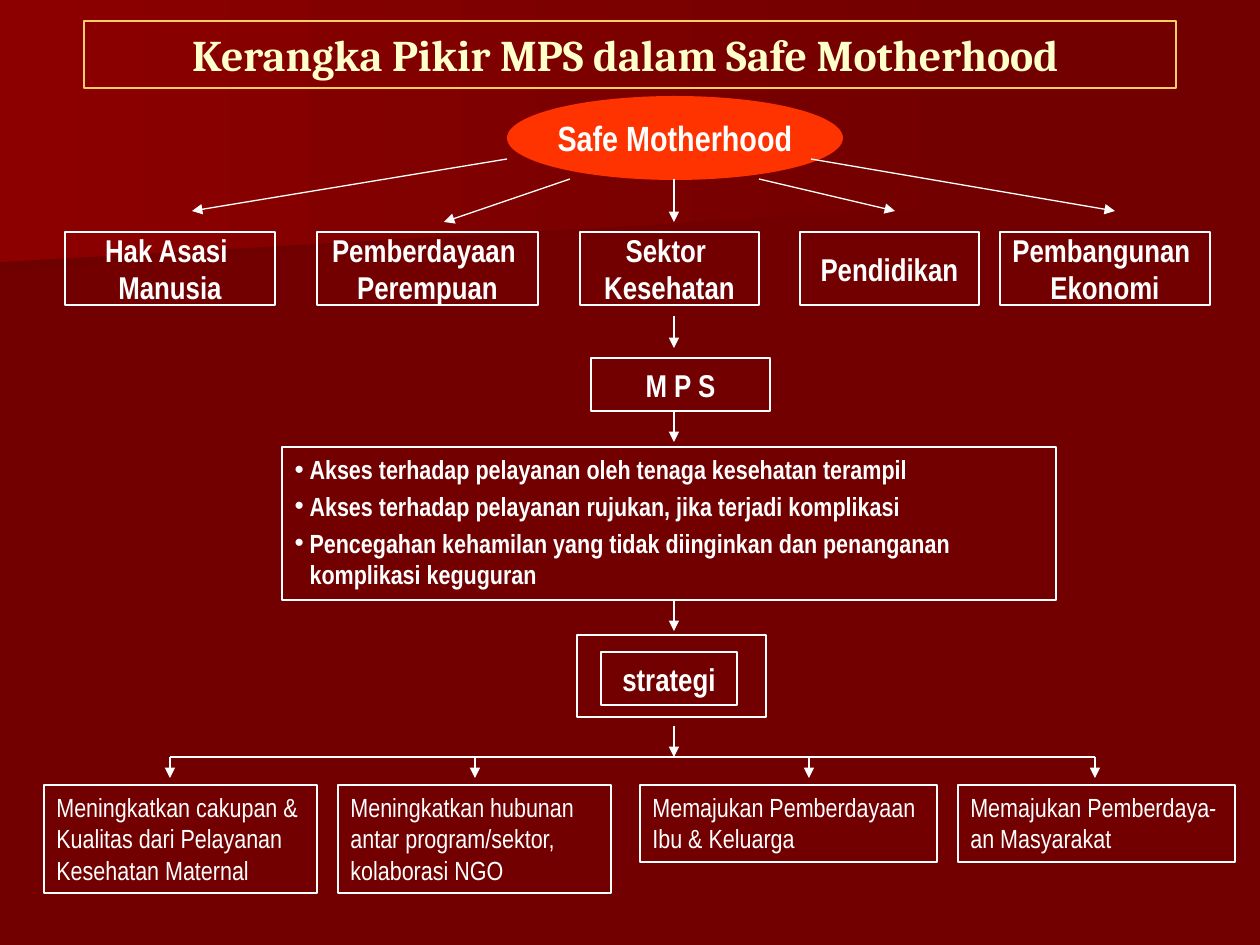
from lxml import etree
from pptx import Presentation
from pptx.dml.color import RGBColor
from pptx.enum.shapes import MSO_CONNECTOR, MSO_SHAPE
from pptx.enum.text import MSO_ANCHOR, MSO_AUTO_SIZE, PP_ALIGN
from pptx.oxml.ns import qn
from pptx.util import Pt

RECT, OVAL = MSO_SHAPE.RECTANGLE, MSO_SHAPE.OVAL
STRAIGHT = MSO_CONNECTOR.STRAIGHT
TOP, MIDDLE = MSO_ANCHOR.TOP, MSO_ANCHOR.MIDDLE
LEFT, CENTER = PP_ALIGN.LEFT, PP_ALIGN.CENTER
NO_FIT = MSO_AUTO_SIZE.NONE

SCALE = 914400 / 126
WHITE = "FFFFFF"
NARROW = "Arial Narrow"
AXIS = 674  # x of the central flow
BAR = 757   # y of the line that branches to the strategies

HEAD = {"name": NARROW, "size": Pt(18), "bold": True}
OVAL_FONT = {**HEAD, "size": Pt(20)}
BODY = {"name": NARROW, "size": Pt(15), "bold": False}
LIST = {**BODY, "bold": True}
TITLE = {"name": "Cambria", "size": Pt(25), "bold": True}

PILLARS = [
    (65, 210, "Hak Asasi \nManusia"),
    (317, 221, "Pemberdayaan \nPerempuan"),
    (580, 179, "Sektor \nKesehatan"),
    (800, 179, "Pendidikan"),
    (1000, 210, "Pembangunan \nEkonomi"),
]
RAYS = [
    (507, 159, 192, 211),
    (570, 179, 444, 222),
    (AXIS, 179, AXIS, 222),
    (759, 179, 895, 211),
    (811, 159, 1115, 211),
]
GOALS = [
    "Akses terhadap pelayanan oleh tenaga kesehatan terampil",
    "Akses terhadap pelayanan rujukan, jika terjadi komplikasi",
    "Pencegahan kehamilan yang tidak diinginkan dan penanganan "
    "komplikasi keguguran",
]
# left, width, height, arrow x, text
PLANS = [
    (44, 273, 108, 170,
     "Meningkatkan cakupan & Kualitas dari Pelayanan Kesehatan Maternal"),
    (338, 273, 108, 475,
     "Meningkatkan hubunan antar program/sektor, kolaborasi NGO"),
    (640, 297, 77, 809, "Memajukan Pemberdayaan Ibu & Keluarga"),
    (958, 277, 77, 1095, "Memajukan Pemberdaya-an Masyarakat"),
]
STEPS = [(316, 348), (411, 442), (600, 631), (726, BAR)]
# points, start colour
FACETS = [
    ([(980, 193), (0, 273), (0, 127), (982, 127), (980, 161)], "6F0000"),
    ([(998, 204), (0, 262), (0, 0), (998, 0)], "8C0000"),
]


def px(n):
    return round(n * SCALE)


def rgb(code):
    return RGBColor.from_string(code)


def outline(shape, color=WHITE):
    shape.line.color.rgb = rgb(color)
    shape.line.width = Pt(0.75)


def write(shape, text, font, color=WHITE, align=CENTER, anchor=MIDDLE,
          wrap=True):
    frame = shape.text_frame
    frame.text = text
    frame.auto_size = NO_FIT
    frame.word_wrap = wrap
    frame.vertical_anchor = anchor
    for para in frame.paragraphs:
        para.alignment = align
        for run in para.runs:
            for key, value in font.items():
                setattr(run.font, key, value)
            run.font.color.rgb = rgb(color)


def place(shape, x, y, w, h):
    shape.left, shape.top = px(x), px(y)
    shape.width, shape.height = px(w), px(h)


def box(slide, x, y, w, h, kind=RECT, fill=None):
    shape = slide.shapes.add_shape(kind, px(x), px(y), px(w), px(h))
    shape.shadow.inherit = False
    if fill:
        shape.fill.solid()
        shape.fill.fore_color.rgb = rgb(fill)
        shape.line.fill.background()
    else:
        shape.fill.background()
        outline(shape)
    return shape


def line(slide, x1, y1, x2, y2, arrow=True):
    link = slide.shapes.add_connector(STRAIGHT, px(x1), px(y1), px(x2), px(y2))
    outline(link)
    if arrow:
        etree.SubElement(link.line._get_or_add_ln(), qn("a:tailEnd"),
                         type="triangle")
    etree.SubElement(link._element.spPr, qn("a:effectLst"))


def facet(slide, points, color, depth):
    """Draw a background gradient polygon at the given stacking depth."""
    form = slide.shapes.build_freeform(*points[0], scale=SCALE)
    form.add_line_segments(points[1:])
    shape = form.convert_to_shape()
    shape.shadow.inherit = False
    shape.line.fill.background()
    shape.fill.gradient()
    shape.fill.gradient_angle = 0
    for stop, code in zip(shape.fill.gradient_stops, (color, "720000")):
        stop.color.rgb = rgb(code)
    slide.shapes._spTree.insert(2 + depth, shape._element)


def heading(slide):
    title = slide.shapes.title
    place(title, 84, 21, 1092, 67)
    outline(title, "FFCC66")
    write(title, "Kerangka Pikir MPS dalam Safe Motherhood ", TITLE, "FFFFCC",
          anchor=TOP)


def goals(slide):
    body = slide.placeholders[1]
    place(body, 282, 447, 774, 153)
    outline(body)
    write(body, "\n".join(GOALS), LIST, align=LEFT, anchor=TOP)
    for para in body.text_frame.paragraphs:
        para.space_before = Pt(3)
        props = para._p.get_or_add_pPr()
        props.set("marL", str(px(15)))
        props.set("indent", str(px(-15)))


def main():
    deck = Presentation()
    deck.slide_width, deck.slide_height = px(1260), px(945)
    slide = deck.slides.add_slide(deck.slide_layouts[1])
    back = slide.background.fill
    back.solid()
    back.fore_color.rgb = rgb("720000")
    for depth, (points, color) in enumerate(FACETS):
        facet(slide, points, color, depth)

    heading(slide)
    goals(slide)
    write(box(slide, 507, 96, 336, 84, OVAL, "FF3300"), "Safe Motherhood",
          OVAL_FONT, wrap=False)
    for x, w, text in PILLARS:
        write(box(slide, x, 232, w, 73), text, HEAD, wrap=False)
    for ray in RAYS:
        line(slide, *ray)

    write(box(slide, 591, 358, 179, 53), "M P S", HEAD, wrap=False)
    box(slide, 577, 635, 189, 82)
    write(box(slide, 601, 652, 136, 53), "strategi", HEAD, wrap=False)
    for start, end in STEPS:
        line(slide, AXIS, start, AXIS, end)

    line(slide, PLANS[0][3], BAR, PLANS[-1][3], BAR, arrow=False)
    for x, w, h, stem, text in PLANS:
        line(slide, stem, BAR, stem, 778)
        write(box(slide, x, 785, w, h), text, BODY, align=LEFT, anchor=TOP)
    deck.save("out.pptx")


if __name__ == "__main__":
    main()
